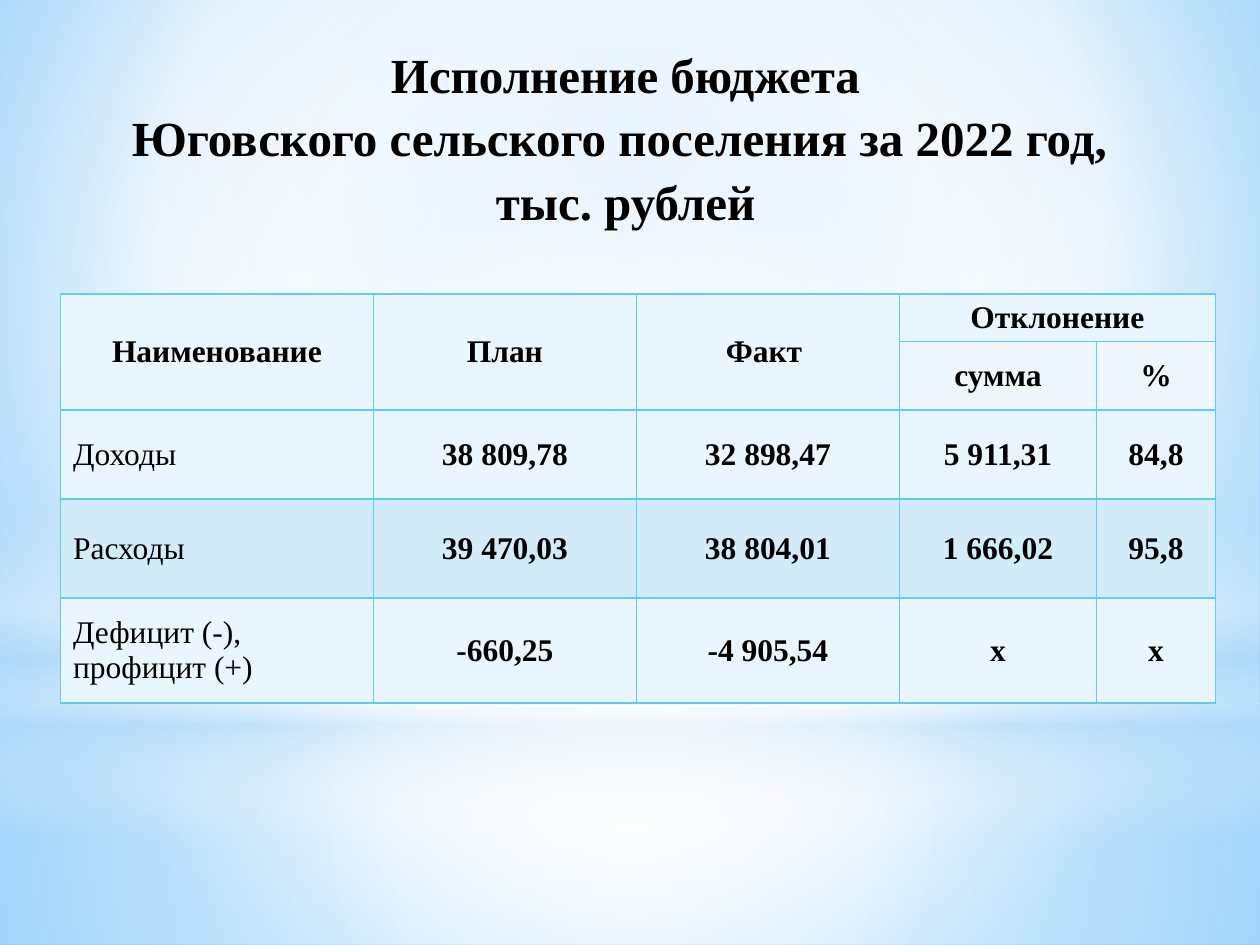
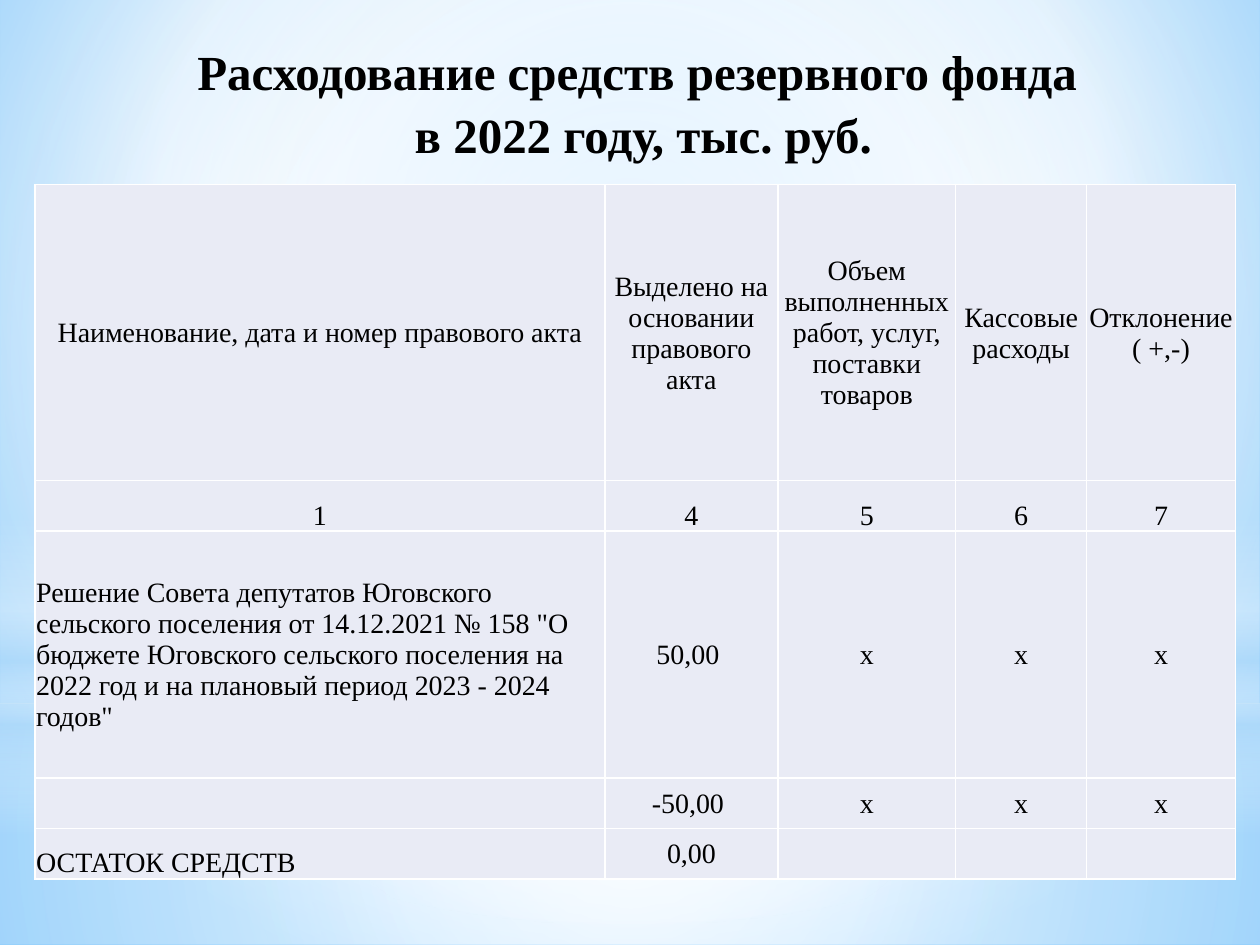
from dataclasses import dataclass

from lxml import etree
from pptx import Presentation
from pptx.dml.color import RGBColor
from pptx.enum.shapes import MSO_SHAPE
from pptx.enum.text import MSO_ANCHOR, PP_ALIGN
from pptx.oxml.ns import qn
from pptx.util import Pt

RECTANGLE, OVAL = MSO_SHAPE.RECTANGLE, MSO_SHAPE.OVAL
LEFT, CENTER = PP_ALIGN.LEFT, PP_ALIGN.CENTER
TOP, MIDDLE, BOTTOM = MSO_ANCHOR.TOP, MSO_ANCHOR.MIDDLE, MSO_ANCHOR.BOTTOM
BLANK_LAYOUT = 6
SLIDE_WIDTH, SLIDE_HEIGHT = 720, 540
HORIZON = 401.8


@dataclass(frozen=True)
class Theme:
    font: str = "Times New Roman"
    ink: str = "000000"
    white: str = "FFFFFF"
    haze: str = "B4DCFA"
    sky: str = "9ED5FF"
    deep_sky: str = "5BB9FF"
    cyan: str = "5ECCF3"
    pale: str = "EAF6FD"
    paler: str = "EDF7FD"
    band: str = "D2ECFA"
    lavender: str = "E9EBF5"
    title_size: int = 28
    budget_size: int = 18
    reserve_size: int = 16
    title_spacing: float = 1.08


class Deck:
    def __init__(self, theme):
        self.theme = theme
        self.presentation = Presentation()
        self.presentation.slide_width = Pt(SLIDE_WIDTH)
        self.presentation.slide_height = Pt(SLIDE_HEIGHT)
        self.slide = None

    def add_slide(self):
        t = self.theme
        layout = self.presentation.slide_layouts[BLANK_LAYOUT]
        self.slide = self.presentation.slides.add_slide(layout)
        self.slide.background.fill.gradient()
        sky = [(0, t.sky, 100), (60, t.white, 100), (100, t.deep_sky, 100)]
        self.set_gradient(self.slide._element, sky, (20, 10, 20, 60))
        centre = (50, 50, 50, 50)
        self.glow(RECTANGLE, (0, HORIZON, SLIDE_WIDTH, SLIDE_HEIGHT - HORIZON),
                  [(0, t.white, 91), (37, t.white, 76), (100, t.haze, 79)], centre)
        self.glow(RECTANGLE, (0, 0, SLIDE_WIDTH, HORIZON),
                  [(0, t.white, 89), (48, t.white, 62), (100, t.haze, 79)], centre)
        self.glow(RECTANGLE, (0, 296.6, SLIDE_WIDTH, 180),
                  [(0, t.white, 0), (29, t.white, 30), (45, t.haze, 40),
                   (55, t.white, 26), (65, t.haze, 60), (100, t.white, 0)])
        self.glow(OVAL, (0, 126, SLIDE_WIDTH, HORIZON),
                  [(0, t.white, 100), (56, t.white, 0)], centre)

    def set_gradient(self, element, stops, focus=None):
        gradient = element.find(".//" + qn("a:gradFill"))
        gradient.clear()
        gradient.set("rotWithShape", "1")
        stop_list = etree.SubElement(gradient, qn("a:gsLst"))
        for position, color, opacity in stops:
            stop = etree.SubElement(stop_list, qn("a:gs"), pos=str(position * 1000))
            tint = etree.SubElement(stop, qn("a:srgbClr"), val=color)
            if opacity < 100:
                etree.SubElement(tint, qn("a:alpha"), val=str(opacity * 1000))
        if focus:
            circle = etree.SubElement(gradient, qn("a:path"))
            circle.set("path", "circle")
            edges = {side: str(inset * 1000) for side, inset in zip("ltrb", focus)}
            etree.SubElement(circle, qn("a:fillToRect"), **edges)
        else:
            etree.SubElement(gradient, qn("a:lin"), ang="5400000", scaled="0")

    def glow(self, outline, box, stops, focus=None):
        light = self.slide.shapes.add_shape(outline, *map(Pt, box))
        light.shadow.inherit = False
        light.line.fill.background()
        light.fill.gradient()
        self.set_gradient(light._element, stops, focus)

    def set_text(self, frame, text, size, bold, align, spacing=None):
        frame.text = text
        for paragraph in frame.paragraphs:
            paragraph.alignment = align
            if spacing:
                paragraph.line_spacing = spacing
            for run in paragraph.runs:
                run.font.name = self.theme.font
                run.font.size = Pt(size)
                run.font.bold = bold
                run.font.color.rgb = RGBColor.from_string(self.theme.ink)

    def title(self, text, box, anchor):
        heading = self.slide.shapes.add_textbox(*map(Pt, box))
        frame = heading.text_frame
        frame.word_wrap = True
        frame.vertical_anchor = anchor
        self.set_text(frame, text, self.theme.title_size, True, CENTER,
                      self.theme.title_spacing)

    def set_borders(self, cell, color):
        properties = cell._tc.get_or_add_tcPr()
        for index, side in enumerate(("a:lnL", "a:lnR", "a:lnT", "a:lnB")):
            border = etree.Element(qn(side), w=str(int(Pt(1))))
            paint = etree.SubElement(border, qn("a:solidFill"))
            etree.SubElement(paint, qn("a:srgbClr"), val=color)
            properties.insert(index, border)

    def table(self, origin, widths, heights, rows, fills, border, size,
              header_rows, bold=False, merges=(), low_cells=(), insets=None):
        box = (*origin, sum(widths), sum(heights))
        frame = self.slide.shapes.add_table(len(rows), len(widths), *map(Pt, box))
        grid = frame.table
        grid.first_row = grid.horz_banding = False
        for column, width in zip(grid.columns, widths):
            column.width = Pt(width)
        for row, height in zip(grid.rows, heights):
            row.height = Pt(height)
        for first, last in merges:
            grid.cell(*first).merge(grid.cell(*last))
        for r, (texts, fill) in enumerate(zip(rows, fills)):
            for c, text in enumerate(texts):
                cell = grid.cell(r, c)
                cell.fill.solid()
                cell.fill.fore_color.rgb = RGBColor.from_string(fill)
                self.set_borders(cell, border)
                cell.vertical_anchor = BOTTOM if (r, c) in low_cells else MIDDLE
                if insets:
                    (cell.margin_left, cell.margin_top,
                     cell.margin_right, cell.margin_bottom) = map(Pt, insets)
                is_label = c == 0 and r >= header_rows
                if text:
                    self.set_text(cell.text_frame, text, size, bold and not is_label,
                                  LEFT if is_label else CENTER)


def budget_slide(deck):
    t = deck.theme
    deck.add_slide()
    rows = [
        ("Наименование", "План", "Факт ", "Отклонение", ""),
        ("", "", "", "сумма", "%"),
        ("Доходы", "38 809,78", "32 898,47", "5 911,31", "84,8"),
        ("Расходы", "39 470,03", "38 804,01", "1 666,02", "95,8"),
        ("Дефицит (-), профицит (+)", "-660,25", "-4 905,54", "х", "х"),
    ]
    merges = [((0, c), (1, c)) for c in range(3)] + [((0, 3), (0, 4))]
    deck.table((34.6, 167.9), (178.8, 150.3, 150.3, 112.6, 68),
               (27.4, 38.9, 51.1, 56.6, 60), rows,
               (t.pale, t.paler, t.pale, t.band, t.pale), t.cyan,
               t.budget_size, header_rows=2, bold=True, merges=merges)
    deck.title(" Исполнение бюджета \vЮговского сельского поселения за 2022 год, \n"
               "тыс. рублей", (8.6, 23.8, 697.7, 106.6), MIDDLE)


def reserve_slide(deck):
    t = deck.theme
    deck.add_slide()
    deck.title("Расходование средств резервного фонда \vв 2022 году, тыс. руб.",
               (42.5, 17.3, 650.2, 42.5), TOP)
    rows = [
        ("Наименование, дата и номер правового акта",
         "Выделено на основании правового акта",
         "Объем выполненных работ, услуг, поставки товаров",
         "Кассовые расходы", "Отклонение ( +,-)"),
        ("1", "4", "5", "6", "7"),
        ('Решение Совета депутатов Юговского сельского поселения от 14.12.2021 '
         '№ 158 "О бюджете Юговского сельского поселения на 2022 год и на '
         'плановый период 2023 - 2024 годов"', "50,00 ", "х", "х", "х"),
        ("", "-50,00 ", "х", "х", "х"),
        ("ОСТАТОК СРЕДСТВ", "0,00", "", "", ""),
    ]
    low_cells = [(1, c) for c in range(5)] + [(4, 0)]
    deck.table((20, 105.5), (325.6, 99, 101.5, 74.9, 85),
               (169.2, 28.8, 141.1, 28.8, 28.8), rows,
               [t.lavender] * len(rows), t.white, t.reserve_size,
               header_rows=2, low_cells=low_cells, insets=(0.7, 0.7, 0.7, 0))


def main():
    deck = Deck(Theme())
    budget_slide(deck)
    reserve_slide(deck)
    deck.presentation.save("out.pptx")


if __name__ == "__main__":
    main()
